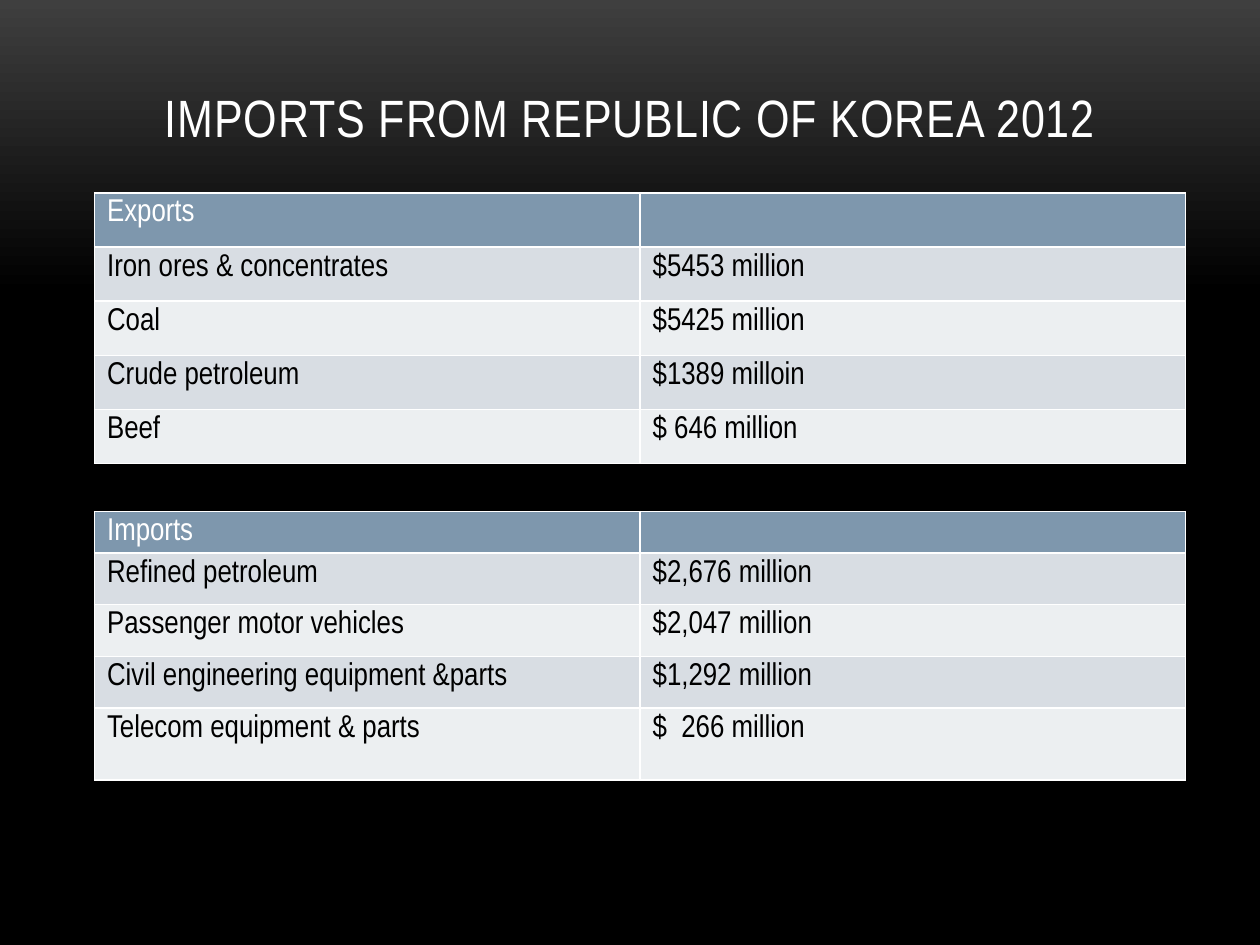
import copy

import pptx
import pptx.dml.color
import pptx.enum.text
import pptx.oxml.ns
import pptx.util
from lxml import etree

COLORS = {
    "white": "FFFFFF",
    "black": "000000",
    "glow": "3F3F3F",
    "header": "7E97AD",
    "odd": "D8DDE3",
    "even": "ECEFF1",
}
FONT = "Arial Narrow"


def write_text(frame, text, size=18, color="black", align=None, spacing=None):
    paragraph = frame.paragraphs[0]
    paragraph.alignment = align
    run = paragraph.add_run()
    run.text = text
    run.font.name = FONT
    run.font.size = pptx.util.Pt(size)
    run.font.color.rgb = pptx.dml.color.RGBColor.from_string(COLORS[color])
    if spacing:
        run.font._element.set("spc", str(round(spacing * 100)))


def format_cell(cell, fill, margin_top):
    qualify = pptx.oxml.ns.qn
    properties = cell._tc.get_or_add_tcPr()
    for edge in ("lnL", "lnR", "lnT", "lnB"):
        line = etree.SubElement(properties, qualify(f"a:{edge}"), w=str(pptx.util.Pt(1)))
        solid = etree.SubElement(line, qualify("a:solidFill"))
        etree.SubElement(solid, qualify("a:srgbClr"), val=COLORS["white"])
    cell.fill.solid()
    cell.fill.fore_color.rgb = pptx.dml.color.RGBColor.from_string(COLORS[fill])
    cell.margin_top = pptx.util.Inches(margin_top)
    cell.margin_bottom = 0


presentation = pptx.Presentation()
presentation.slide_width = pptx.util.Inches(10)
presentation.slide_height = pptx.util.Inches(7.5)
slide = presentation.slides.add_slide(presentation.slide_layouts[5])

background = slide.background.fill
background.gradient()
background.gradient_angle = 270
first_stop = background.gradient_stops[0]._gs
first_stop.addnext(copy.deepcopy(first_stop))
for stop, (position, color) in zip(
    background.gradient_stops, ((0, "glow"), (0.31, "black"), (1, "black"))
):
    stop.position = position
    stop.color.rgb = pptx.dml.color.RGBColor.from_string(COLORS[color])

title = slide.shapes.title
title.left, title.top, title.width, title.height = map(
    pptx.util.Inches, (0.67, 0.3, 8.67, 1.25)
)
title.text_frame.vertical_anchor = pptx.enum.text.MSO_ANCHOR.MIDDLE
title.text_frame.auto_size = pptx.enum.text.MSO_AUTO_SIZE.NONE
write_text(
    title.text_frame,
    "IMPORTS FROM REPUBLIC OF KOREA 2012",
    size=30,
    color="white",
    align=pptx.enum.text.PP_ALIGN.CENTER,
    spacing=0.5,
)

imports = [
    ("Imports", ""),
    ("Refined petroleum", "$2,676 million"),
    ("Passenger motor vehicles", "$2,047 million"),
    ("Civil engineering equipment &parts", "$1,292 million"),
    ("Telecom equipment & parts", "$  266 million"),
]
exports = [
    ("Exports", ""),
    ("Iron ores & concentrates", "$5453 million"),
    ("Coal", "$5425 million"),
    ("Crude petroleum", "$1389 milloin"),
    ("Beef", "$ 646 million"),
]

for records, top, heights in (
    (imports, 4.06, [0.33] + [0.41] * 3 + [0.57]),
    (exports, 1.53, [0.43] * 5),
):
    table = slide.shapes.add_table(
        len(records),
        2,
        pptx.util.Inches(0.75),
        pptx.util.Inches(top),
        pptx.util.Inches(8.66),
        pptx.util.Inches(sum(heights)),
    ).table
    for row_index, (record, height) in enumerate(zip(records, heights)):
        table.rows[row_index].height = pptx.util.Inches(height)
        is_header = row_index == 0
        fill = "header" if is_header else ("even", "odd")[row_index % 2]
        for column_index, text in enumerate(record):
            cell = table.cell(row_index, column_index)
            format_cell(cell, fill, margin_top=0.05 if text else 0)
            if text:
                write_text(cell.text_frame, text, color="white" if is_header else "black")

presentation.save("out.pptx")
